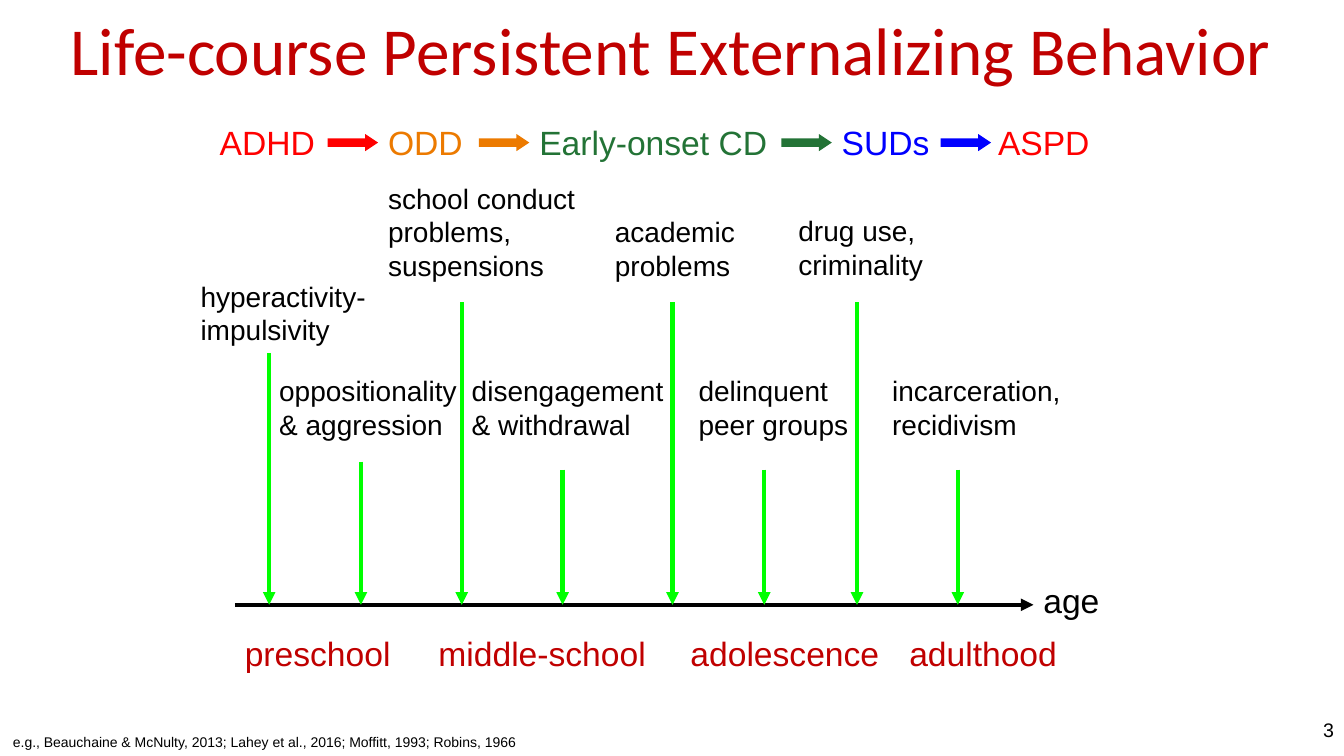
"""Builds the slide on life-course persistent externalizing behavior."""
import pptx
import pptx.dml.color
import pptx.enum.shapes
import pptx.enum.text
import pptx.oxml.ns
import pptx.util
from lxml import etree

PX = 9144
COLORS = {
    "crimson": "C00000", "black": "000000", "lime": "00FF00", "red": "FF0000",
    "orange": "EC7A00", "green": "237336", "blue": "0000FF",
}
ALIGN = pptx.enum.text.PP_ALIGN
ANCHOR = pptx.enum.text.MSO_ANCHOR

DIAGNOSES = [
    ("ADHD", "red", 0, 117),
    ("ODD", "orange", 167, 267),
    ("Early-onset CD", "green", 317, 567),
    ("SUDs", "blue", 617, 725),
    ("ASPD", "red", 772, None),
]
EVENTS = [
    ("hyperactivity-\nimpulsivity", 0, 97, 78, 175),
    ("oppositionality\n& aggression", 78, 191, 169, 283),
    ("school conduct\nproblems, suspensions", 186, 0, 269, 125),
    ("disengagement\n& withdrawal", 269, 191, 369, 291),
    ("academic problems", 411, 33, 478, 125),
    ("delinquent\npeer groups", 494, 191, 569, 291),
    ("drug use,\ncriminality", 593, 32, 661, 125),
    ("incarceration,\nrecidivism", 686, 191, 761, 291),
]
LIFE_STAGES = [
    ("preschool", 44), ("middle-school", 236),
    ("adolescence", 486), ("adulthood", 703),
]


def rgb(color):
    """Return the named colour."""
    return pptx.dml.color.RGBColor.from_string(COLORS[color])


def add_label(page, box, text, size, color="black", font="Arial",
              align=ALIGN.LEFT, anchor=ANCHOR.TOP):
    """Add a wrapping text box, with a line break at each newline."""
    label = page.shapes.add_textbox(*(value * PX for value in box))
    frame = label.text_frame
    frame.word_wrap = True
    frame.vertical_anchor = anchor
    para = frame.paragraphs[0]
    para.alignment = align
    for index, line in enumerate(text.split("\n")):
        if index:
            para.add_line_break()
        span = para.add_run()
        span.text = line
        span.font.name = font
        span.font.size = pptx.util.Pt(size)
        span.font.color.rgb = rgb(color)


def add_line_arrow(page, start, end, color):
    """Add a straight line with an arrowhead at its end."""
    arrow = page.shapes.add_connector(
        pptx.enum.shapes.MSO_CONNECTOR.STRAIGHT,
        *(value * PX for value in start + end))
    arrow.line.color.rgb = rgb(color)
    arrow.line.width = pptx.util.Pt(3)
    qn = pptx.oxml.ns.qn
    properties = arrow.line._get_or_add_ln()
    etree.SubElement(properties, qn("a:tailEnd"), type="triangle")
    etree.SubElement(properties.getparent(), qn("a:effectLst"))


def add_block_arrow(page, box, color):
    """Add a filled arrow pointing right."""
    arrow = page.shapes.add_shape(
        pptx.enum.shapes.MSO_SHAPE.RIGHT_ARROW, *(value * PX for value in box))
    arrow.adjustments[0] = 0.5
    arrow.adjustments[1] = 0.75
    arrow.shadow.inherit = False
    arrow.fill.solid()
    arrow.fill.fore_color.rgb = rgb(color)
    arrow.line.fill.background()


def add_title(page, box):
    """Add the centred slide title."""
    add_label(page, box, "Life-course Persistent Externalizing Behavior", 48,
              "crimson", "Calibri", ALIGN.CENTER, ANCHOR.MIDDLE)


def add_progression(page, box):
    """Add the row of diagnoses joined by block arrows."""
    left, top, width, height = box
    for name, color, offset, arrow_offset in DIAGNOSES:
        add_label(page, (left + offset, top, 275, height), name, 24, color)
        if arrow_offset is not None:
            add_block_arrow(page, (left + arrow_offset, top + 17, 50, 17), color)


def add_timeline(page, box):
    """Add the age axis, its events above and the life stages below."""
    left, top, width, height = box
    axis_top = top + 425
    axis_end = left + 836
    add_line_arrow(page, (left + 44, axis_top), (axis_end, axis_top), "black")
    add_label(page, (axis_end, axis_top - 30, 92, 50), "age", 24)
    for text, label_x, label_y, arrow_x, arrow_y in EVENTS:
        add_line_arrow(page, (left + arrow_x, top + arrow_y),
                       (left + arrow_x, axis_top), "lime")
        add_label(page, (left + label_x, top + label_y, 242, 77), text, 20)
    for name, offset in LIFE_STAGES:
        add_label(page, (left + offset, top + height - 50, 250, 50),
                  name, 24, "crimson")


def add_footer(page, box):
    """Add the citations at the left and the page number at the right."""
    left, top, width, height = box
    add_label(page, (left + 3, top + height - 27, 606, 27),
              "e.g., Beauchaine & McNulty, 2013; Lahey et al., 2016; "
              "Moffitt, 1993; Robins, 1966", 10)
    add_label(page, (left + width - 142, top, 142, height), "3", 14,
              align=ALIGN.RIGHT)


def main():
    """Build and save the deck."""
    deck = pptx.Presentation()
    deck.slide_width = 1333 * PX
    deck.slide_height = 750 * PX
    page = deck.slides.add_slide(deck.slide_layouts[6])
    add_title(page, (12, 8, 1307, 81))
    add_progression(page, (208, 116, 1047, 50))
    add_timeline(page, (189, 175, 953, 498))
    add_footer(page, (0, 707, 1333, 43))
    deck.save("out.pptx")


if __name__ == "__main__":
    main()
